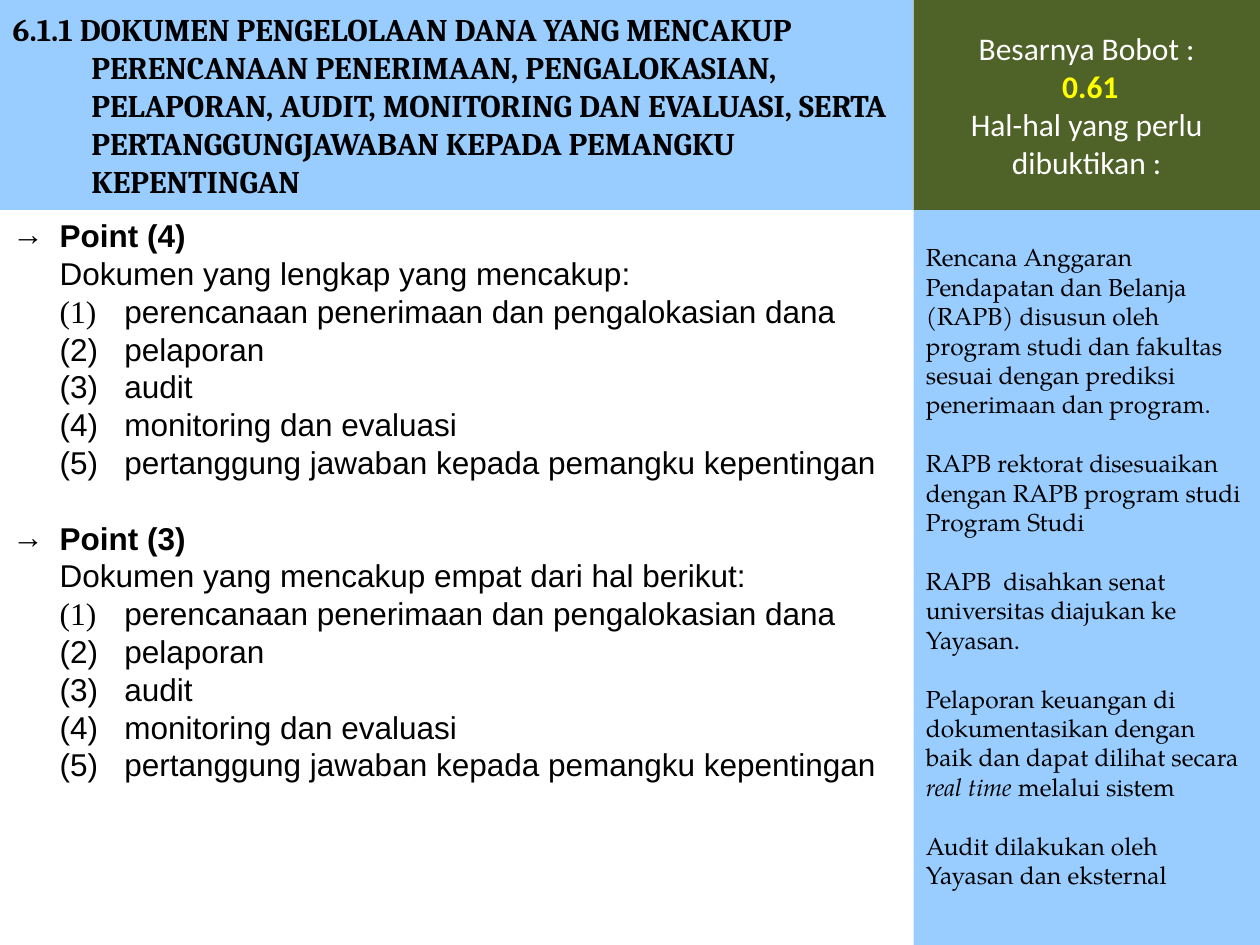
"""Build a slide on fund management documents with scoring points and evidence."""
from dataclasses import dataclass

from lxml import etree
from pptx import Presentation
from pptx.dml.color import RGBColor
from pptx.enum.shapes import MSO_SHAPE
from pptx.enum.text import MSO_ANCHOR, MSO_AUTO_SIZE, PP_ALIGN
from pptx.oxml.ns import qn
from pptx.util import Pt

RECTANGLE = MSO_SHAPE.RECTANGLE
TOP, MIDDLE = MSO_ANCHOR.TOP, MSO_ANCHOR.MIDDLE
LEFT, CENTER = PP_ALIGN.LEFT, PP_ALIGN.CENTER
FIXED_SIZE = MSO_AUTO_SIZE.NONE
TITLE_ONLY = 5


@dataclass(frozen=True)
class Theme:
    sky: RGBColor = RGBColor(0x99, 0xCC, 0xFF)
    olive: RGBColor = RGBColor(0x4F, 0x62, 0x28)
    ink: RGBColor = RGBColor(0, 0, 0)
    white: RGBColor = RGBColor(255, 255, 255)
    yellow: RGBColor = RGBColor(255, 255, 0)
    heading_font: str = "Cambria"
    points_font: str = "Arial"
    number_font: str = "Times New Roman"
    evidence_font: str = "TeX Gyre Pagella"
    weight_font: str = "Calibri"
    large: int = 18
    small: int = 14
    leading: float = 1.2


WIDTH, HEIGHT = 720, 540
MAIN_WIDTH, HEADER_HEIGHT = 522, 120
SIDE_WIDTH, BODY_HEIGHT = WIDTH - MAIN_WIDTH, HEIGHT - HEADER_HEIGHT
HEADING_INDENT, POINT_INDENT, ITEM_INDENT = 45, 27, 64

HEADING = (
    "6.1.1 DOKUMEN PENGELOLAAN DANA YANG MENCAKUP PERENCANAAN PENERIMAAN, "
    "PENGALOKASIAN, PELAPORAN, AUDIT, MONITORING DAN EVALUASI, SERTA "
    "PERTANGGUNGJAWABAN KEPADA PEMANGKU KEPENTINGAN"
)
POINTS = [
    ("Point (4)", "Dokumen yang lengkap yang mencakup:"),
    ("Point (3)", "Dokumen yang mencakup empat dari hal berikut:"),
]
DOCUMENTS = [
    "perencanaan penerimaan dan pengalokasian dana",
    "pelaporan",
    "audit",
    "monitoring dan evaluasi",
    "pertanggung jawaban kepada pemangku kepentingan",
]
EVIDENCE = [
    ["Rencana Anggaran Pendapatan dan Belanja (RAPB) disusun oleh program studi "
     "dan fakultas sesuai dengan prediksi penerimaan dan program."],
    ["RAPB rektorat disesuaikan dengan RAPB program studi  Program Studi"],
    ["RAPB  disahkan senat universitas diajukan ke Yayasan."],
    ["Pelaporan keuangan di dokumentasikan dengan baik dan dapat dilihat secara ",
     "real time ", "melalui sistem"],
    ["Audit dilakukan oleh Yayasan dan eksternal"],
]


class SlideBuilder:
    def __init__(self, slide, theme):
        self.slide = slide
        self.theme = theme

    def _frame(self, shape, anchor):
        frame = shape.text_frame
        frame.word_wrap = True
        frame.auto_size = FIXED_SIZE
        frame.vertical_anchor = anchor
        return frame

    def title(self, text, left, top, width, height):
        heading = self.slide.shapes.title
        heading.left, heading.top = Pt(left), Pt(top)
        heading.width, heading.height = Pt(width), Pt(height)
        heading.fill.solid()
        heading.fill.fore_color.rgb = self.theme.sky
        frame = self._frame(heading, MIDDLE)
        frame.text = text
        self.style(frame.paragraphs[0], self.theme.heading_font, bold=True)
        self.indent(frame.paragraphs[0], HEADING_INDENT, -HEADING_INDENT)

    def panel(self, left, top, width, height, color):
        panel = self.slide.shapes.add_shape(
            RECTANGLE, Pt(left), Pt(top), Pt(width), Pt(height))
        panel.shadow.inherit = False
        panel.fill.solid()
        panel.fill.fore_color.rgb = color
        panel.line.fill.background()
        return self._frame(panel, MIDDLE)

    def text_box(self, left, top, width, height):
        box = self.slide.shapes.add_textbox(Pt(left), Pt(top), Pt(width), Pt(height))
        return self._frame(box, TOP)

    def paragraph(self, frame, pieces, font, **look):
        first = frame.paragraphs[0]
        paragraph = frame.add_paragraph() if first.runs else first
        for piece in pieces:
            paragraph.add_run().text = piece
        self.style(paragraph, font, **look)
        return paragraph

    def style(self, paragraph, font, size=None, color=None, bold=False,
              align=LEFT, gap=0):
        size = size or self.theme.large
        paragraph.alignment = align
        paragraph.line_spacing = Pt(size * self.theme.leading)
        paragraph.space_before = Pt(gap)
        for run in paragraph.runs:
            run.font.name = font
            run.font.size = Pt(size)
            run.font.bold = bold
            run.font.color.rgb = color or self.theme.ink

    def indent(self, paragraph, margin, first_line=0, bullet=None):
        properties = paragraph._p.get_or_add_pPr()
        properties.set("marL", str(Pt(margin)))
        properties.set("indent", str(Pt(first_line)))
        if bullet:
            etree.SubElement(properties, qn("a:buFont"), typeface=self.theme.points_font)
            etree.SubElement(properties, qn("a:buChar"), char=bullet)


def add_points(builder):
    theme = builder.theme
    frame = builder.text_box(0, HEADER_HEIGHT, MAIN_WIDTH, BODY_HEIGHT)
    for index, (score, requirement) in enumerate(POINTS):
        gap = theme.large * theme.leading if index else 0
        point = builder.paragraph(frame, [score], theme.points_font, bold=True, gap=gap)
        builder.indent(point, POINT_INDENT, -POINT_INDENT, "→")
        intro = builder.paragraph(frame, [requirement], theme.points_font)
        builder.indent(intro, POINT_INDENT)
        for number, document in enumerate(DOCUMENTS, 1):
            item = builder.paragraph(
                frame, [f"({number})\t", document], theme.points_font)
            builder.indent(item, ITEM_INDENT, POINT_INDENT - ITEM_INDENT)
            if number == 1:
                item.runs[0].font.name = theme.number_font


def add_weight(builder):
    theme = builder.theme
    frame = builder.panel(MAIN_WIDTH, 0, SIDE_WIDTH, HEADER_HEIGHT, theme.olive)
    lines = [["Besarnya Bobot :"], [" ", "0.61"], ["Hal-hal yang perlu dibuktikan :"]]
    _, weight, _ = [
        builder.paragraph(frame, line, theme.weight_font, color=theme.white, align=CENTER)
        for line in lines
    ]
    weight.runs[1].font.bold = True
    weight.runs[1].font.color.rgb = theme.yellow


def add_evidence(builder):
    theme = builder.theme
    frame = builder.panel(
        MAIN_WIDTH, HEADER_HEIGHT, SIDE_WIDTH, BODY_HEIGHT, theme.sky)
    frame.margin_bottom = Pt(16.8)
    for index, pieces in enumerate(EVIDENCE):
        gap = theme.small * theme.leading if index else 0
        evidence = builder.paragraph(
            frame, pieces, theme.evidence_font, size=theme.small, gap=gap)
        if len(pieces) > 1:
            evidence.runs[1].font.italic = True


def main():
    presentation = Presentation()
    presentation.slide_width, presentation.slide_height = Pt(WIDTH), Pt(HEIGHT)
    slide = presentation.slides.add_slide(presentation.slide_layouts[TITLE_ONLY])
    builder = SlideBuilder(slide, Theme())
    builder.title(HEADING, 0, 0, MAIN_WIDTH, HEADER_HEIGHT)
    add_points(builder)
    add_evidence(builder)
    add_weight(builder)
    presentation.save("out.pptx")


if __name__ == "__main__":
    main()
